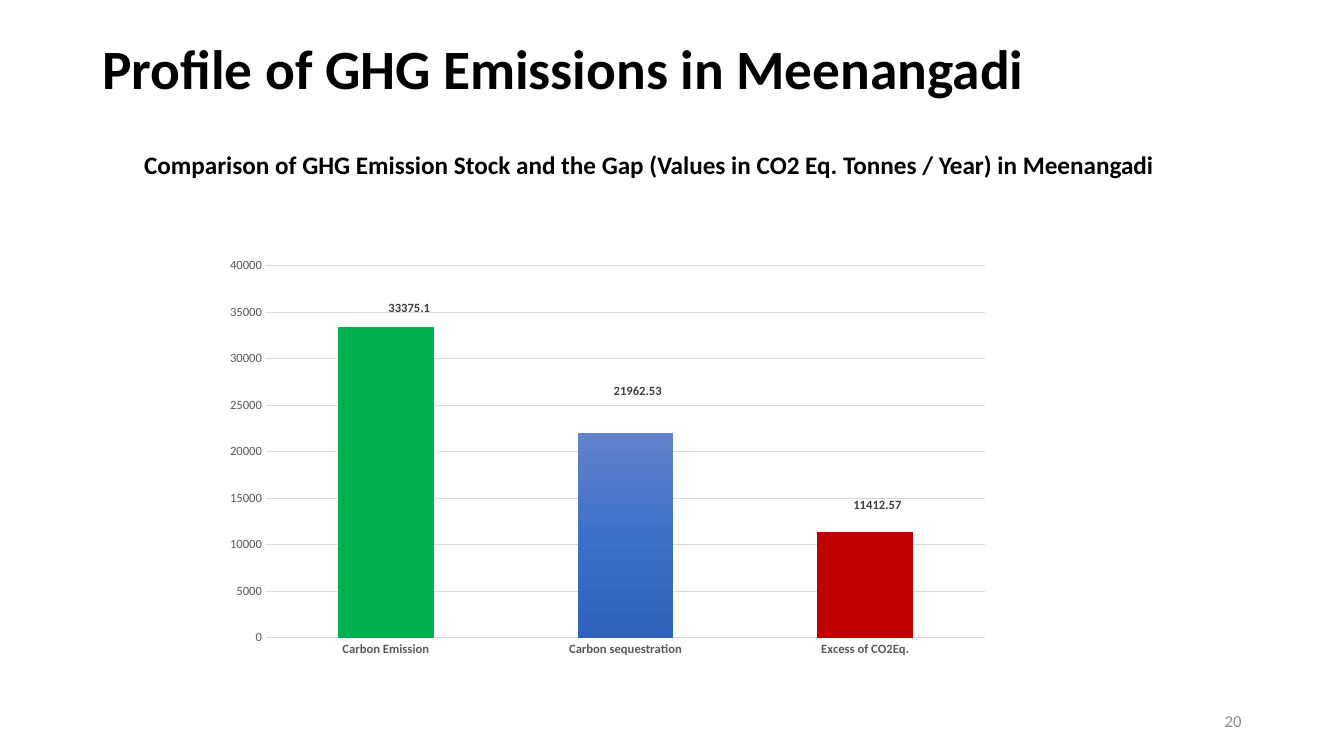
from copy import deepcopy
from dataclasses import dataclass

from pptx import Presentation
from pptx.chart.chart import Chart
from pptx.chart.data import CategoryChartData
from pptx.chart.series import BarSeries
from pptx.dml.color import RGBColor
from pptx.enum.chart import XL_CHART_TYPE, XL_TICK_MARK
from pptx.enum.text import MSO_ANCHOR, PP_ALIGN
from pptx.oxml import parse_xml
from pptx.oxml.ns import nsdecls
from pptx.slide import Slide
from pptx.text.text import Font
from pptx.util import Pt

TOP, MIDDLE = MSO_ANCHOR.TOP, MSO_ANCHOR.MIDDLE
LEFT, RIGHT = PP_ALIGN.LEFT, PP_ALIGN.RIGHT
STACKED = XL_CHART_TYPE.COLUMN_STACKED
NO_TICK = XL_TICK_MARK.NONE

FONT = "Calibri"
CHART_WIDTH, CHART_HEIGHT = 561.6, 296
BLACK = RGBColor(0x00, 0x00, 0x00)
AXIS_GREY = RGBColor(0x59, 0x59, 0x59)
LABEL_GREY = RGBColor(0x40, 0x40, 0x40)
NUMBER_GREY = RGBColor(0x8C, 0x8C, 0x8C)
GRID_GREY = RGBColor(0xD9, 0xD9, 0xD9)
GREEN = RGBColor(0x00, 0xB0, 0x50)
RED = RGBColor(0xC0, 0x00, 0x00)
BLUE_STOPS = (
    (0, RGBColor(0x61, 0x83, 0xCB)),
    (0.5, RGBColor(0x3E, 0x70, 0xCA)),
    (1, RGBColor(0x30, 0x62, 0xBB)),
)
NO_LEADER_LINES = (
    f'<c:extLst {nsdecls("c")}><c:ext uri="{{CE6537A1-D6FC-4f65-9D91-7224C49458BB}}" '
    'xmlns:c15="http://schemas.microsoft.com/office/drawing/2012/chart">'
    '<c15:showLeaderLines val="0"/></c:ext></c:extLst>'
)


@dataclass(frozen=True)
class TextItem:
    text: str
    left: float
    top: float
    width: float
    height: float
    size: float
    color: RGBColor = BLACK
    bold: bool = False
    anchor: MSO_ANCHOR = MIDDLE
    align: PP_ALIGN = LEFT
    line_spacing: float = 1.0


@dataclass(frozen=True)
class Bar:
    """A column; the shifts move its label from the column's centre, in points."""
    category: str
    value: float
    shift_x: float
    shift_y: float
    color: RGBColor | None = None


TEXTS = (
    TextItem("Profile of GHG Emissions in Meenangadi", 66, 28.8, 771, 44.6, 39.6,
             bold=True, line_spacing=0.9),
    TextItem("Comparison of GHG Emission Stock and the Gap "
             "(Values in CO2 Eq. Tonnes / Year) in Meenangadi",
             95.8, 103, 825, 28.8, 18, bold=True, anchor=TOP),
    TextItem("20", 678, 500.4, 216, 28.8, 12, NUMBER_GREY, align=RIGHT),
)
BARS = (
    Bar("Carbon Emission", 33375.1, 16.8, -124.3, GREEN),
    Bar("Carbon sequestration", 21962.53, 8.8, -103),
    Bar("Excess of CO2Eq.", 11412.57, 8.8, -57, RED),
)


def style_font(font: Font, size: float, color: RGBColor, bold: bool) -> None:
    for name, value in {"name": FONT, "size": Pt(size), "bold": bold}.items():
        setattr(font, name, value)
    font.color.rgb = color


def add_text(page: Slide, item: TextItem) -> None:
    box = page.shapes.add_textbox(
        Pt(item.left), Pt(item.top), Pt(item.width), Pt(item.height))
    frame = box.text_frame
    frame.word_wrap = True
    frame.vertical_anchor = item.anchor
    para = frame.paragraphs[0]
    para.alignment = item.align
    para.line_spacing = item.line_spacing
    span = para.add_run()
    span.text = item.text
    style_font(span.font, item.size, item.color, item.bold)


def manual_layout(**settings: float | str):
    """Build a c:layout element; settings must follow schema order."""
    children = "".join(f'<c:{name} val="{value}"/>' for name, value in settings.items())
    return parse_xml(f'<c:layout {nsdecls("c")}><c:manualLayout>{children}'
                     '</c:manualLayout></c:layout>')


def style_axes(chart: Chart) -> None:
    for axis, bold in ((chart.category_axis, True), (chart.value_axis, False)):
        axis.major_tick_mark = NO_TICK
        axis.minor_tick_mark = NO_TICK
        style_font(axis.tick_labels.font, 9, AXIS_GREY, bold)
    chart.category_axis.format.line.color.rgb = GRID_GREY
    chart.category_axis.format.line.width = Pt(1)
    values = chart.value_axis
    values.minimum_scale, values.maximum_scale, values.major_unit = 0, 40000, 5000
    values.format.line.fill.background()
    values.has_major_gridlines = True
    values.major_gridlines.format.line.color.rgb = GRID_GREY
    values.major_gridlines.format.line.width = Pt(0.75)


def fill_bars(series: BarSeries) -> None:
    fill = series.format.fill
    fill.gradient()
    fill.gradient_angle = 270
    stop_list = series._element.xpath("c:spPr/a:gradFill/a:gsLst")[0]
    stop_list.append(deepcopy(stop_list[0]))
    for stop, (position, color) in zip(fill.gradient_stops, BLUE_STOPS):
        stop.position = position
        stop.color.rgb = color
    for index, bar in enumerate(BARS):
        if bar.color is not None:
            point_fill = series.points[index].format.fill
            point_fill.solid()
            point_fill.fore_color.rgb = bar.color


def label_bars(series: BarSeries) -> None:
    series.data_labels.show_value = True
    style_font(series.data_labels.font, 9, LABEL_GREY, True)
    for index, bar in enumerate(BARS):
        style_font(series.points[index].data_label.font, 9, LABEL_GREY, True)
        label = series._element.xpath(f"c:dLbls/c:dLbl[c:idx/@val='{index}']")[0]
        label.insert(1, manual_layout(x=bar.shift_x / CHART_WIDTH,
                                      y=bar.shift_y / CHART_HEIGHT))
    labels = series._element.xpath("c:dLbls")[0]
    for leader_lines in labels.xpath("c:showLeaderLines"):
        leader_lines.set("val", "0")
    labels.append(parse_xml(NO_LEADER_LINES))


def add_emission_chart(page: Slide) -> None:
    data = CategoryChartData()
    data.categories = [bar.category for bar in BARS]
    data.add_series("Series 1", [bar.value for bar in BARS])
    chart = page.shapes.add_chart(
        STACKED, Pt(152.6), Pt(178.6), Pt(CHART_WIDTH), Pt(CHART_HEIGHT), data).chart
    chart.has_title = False
    chart.has_legend = False
    style_font(chart.font, 10, BLACK, False)
    style_axes(chart)
    plot = chart.plots[0]
    for name, value in {"gap_width": 150, "overlap": 100,
                        "vary_by_categories": False}.items():
        setattr(plot, name, value)
    fill_bars(plot.series[0])
    label_bars(plot.series[0])
    area = chart._chartSpace.xpath("c:chart/c:plotArea")[0]
    for layout in area.xpath("c:layout"):
        area.remove(layout)
    area.insert(0, manual_layout(
        layoutTarget="inner", xMode="edge", yMode="edge",
        x=37.4 / CHART_WIDTH, y=11.2 / CHART_HEIGHT,
        w=513.6 / CHART_WIDTH, h=265.8 / CHART_HEIGHT))


def main() -> None:
    deck = Presentation()
    deck.slide_width, deck.slide_height = Pt(960), Pt(540)
    page = deck.slides.add_slide(deck.slide_layouts[6])
    for item in TEXTS:
        add_text(page, item)
    add_emission_chart(page)
    deck.save("out.pptx")


if __name__ == "__main__":
    main()
